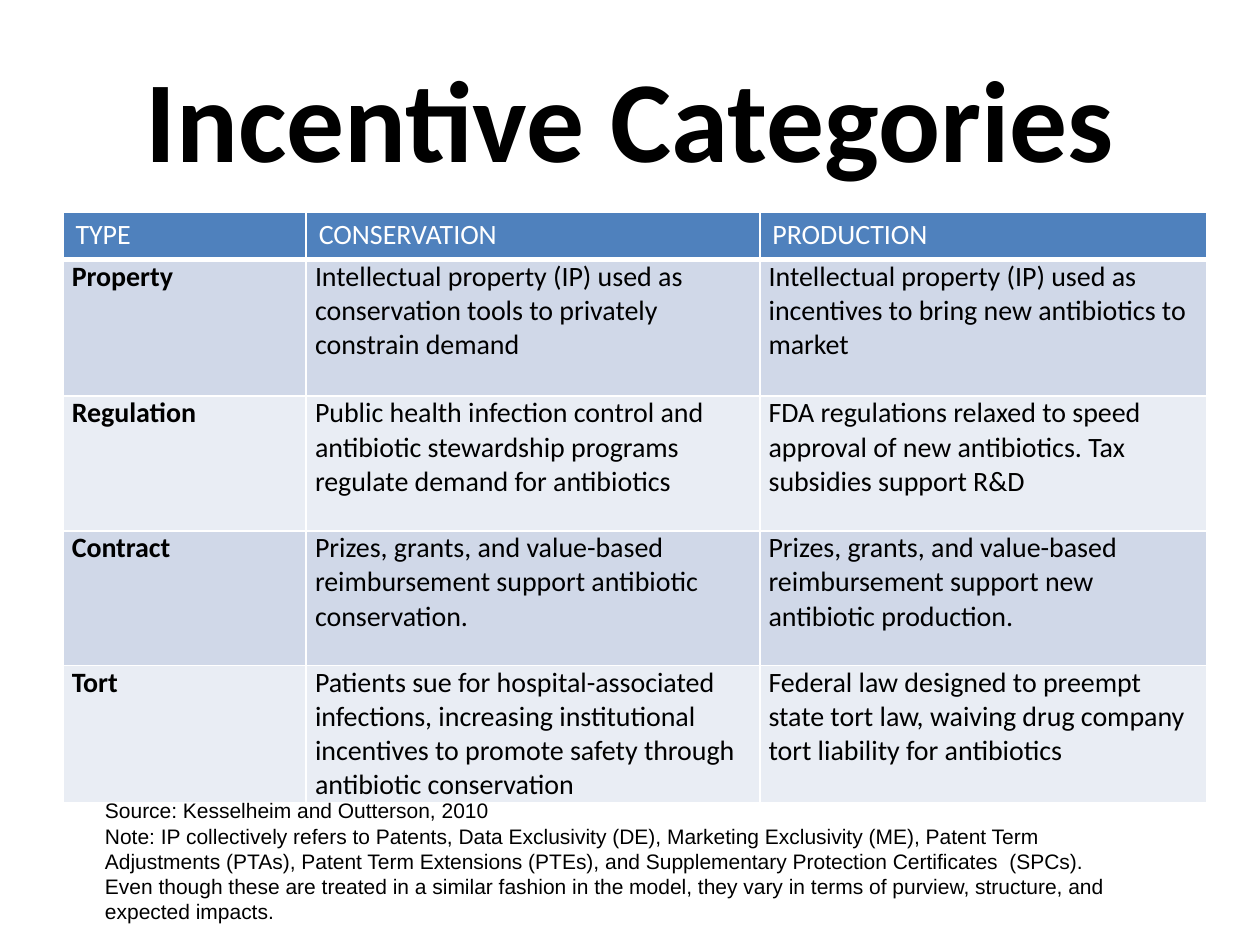
from lxml.etree import SubElement
from pptx import Presentation
from pptx.dml.color import RGBColor
from pptx.enum.text import MSO_ANCHOR, PP_ALIGN
from pptx.oxml.ns import qn
from pptx.util import Pt

BLACK, WHITE = "000000", "FFFFFF"
HEADER_FILL = "4F81BD"
BAND_FILLS = ("D0D8E8", "E9EDF4")
COLUMN_WIDTHS = (139, 259.2, 255.6)
ROW_HEIGHTS = (27.4, 78, 77, 77, 77)

HEADINGS = ("TYPE", "CONSERVATION", "PRODUCTION")
INCENTIVES = (
    ("Property",
     "Intellectual property (IP) used as conservation tools to privately constrain demand",
     "Intellectual property (IP) used as incentives to bring new antibiotics to market"),
    ("Regulation",
     "Public health infection control and antibiotic stewardship programs "
     "regulate demand for antibiotics",
     "FDA regulations relaxed to speed approval of new antibiotics. Tax subsidies support R&D"),
    ("Contract",
     "Prizes, grants, and value-based reimbursement support antibiotic conservation.",
     "Prizes, grants, and value-based reimbursement support new antibiotic production."),
    ("Tort",
     "Patients sue for hospital-associated infections, increasing institutional "
     "incentives to promote safety through antibiotic conservation",
     "Federal law designed to preempt state tort law, waiving drug company "
     "tort liability for antibiotics"),
)
FOOTNOTES = (
    "Source: Kesselheim and Outterson, 2010",
    "Note: IP collectively refers to Patents, Data Exclusivity (DE), Marketing Exclusivity (ME), "
    "Patent Term Adjustments (PTAs), Patent Term Extensions (PTEs), and Supplementary Protection "
    "Certificates  (SPCs). Even though these are treated in a similar fashion in the model, they "
    "vary in terms of purview, structure, and expected impacts.",
)


def color(value):
    return RGBColor.from_string(value)


def add_span(para, text, size, font="Calibri", ink=BLACK, bold=False):
    span = para.add_run()
    span.text = text
    span.font.size = Pt(size)
    span.font.name = font
    span.font.bold = bold
    span.font.color.rgb = color(ink)


def set_margins(target, side, end):
    target.margin_left = target.margin_right = Pt(side)
    target.margin_top = target.margin_bottom = Pt(end)


def add_title(page, text):
    title = page.shapes.title
    title.left, title.top, title.width, title.height = Pt(36), Pt(21.6), Pt(648), Pt(90)
    title.text_frame.vertical_anchor = MSO_ANCHOR.MIDDLE
    para = title.text_frame.paragraphs[0]
    para.alignment = PP_ALIGN.CENTER
    add_span(para, text, 66, bold=True)


def set_borders(cell, bottom):
    """Draw white edges, 1 pt except for the given bottom width."""
    properties = cell._tc.get_or_add_tcPr()
    for edge, width in (("lnL", 1), ("lnR", 1), ("lnT", 1), ("lnB", bottom)):
        line = SubElement(properties, qn(f"a:{edge}"), w=str(Pt(width)))
        SubElement(SubElement(line, qn("a:solidFill")), qn("a:srgbClr"), val=WHITE)


def fill_cell(cell, text, fill, ink=BLACK, bold=False, margins=(5.04, 0), bottom=1):
    set_borders(cell, bottom)
    cell.fill.solid()
    cell.fill.fore_color.rgb = color(fill)
    cell.vertical_anchor = MSO_ANCHOR.TOP
    set_margins(cell, *margins)
    add_span(cell.text_frame.paragraphs[0], text, 16, ink=ink, bold=bold)


def add_incentive_table(page):
    table = page.shapes.add_table(
        len(ROW_HEIGHTS), len(COLUMN_WIDTHS), Pt(36), Pt(121),
        Pt(sum(COLUMN_WIDTHS)), Pt(sum(ROW_HEIGHTS))).table
    for column, width in zip(table.columns, COLUMN_WIDTHS):
        column.width = Pt(width)
    for row, height in zip(table.rows, ROW_HEIGHTS):
        row.height = Pt(height)
    for column, heading in enumerate(HEADINGS):
        fill_cell(table.cell(0, column), heading, HEADER_FILL, ink=WHITE,
                  margins=(7.2, 3.6), bottom=3)
    for row, texts in enumerate(INCENTIVES):
        for column, text in enumerate(texts):
            fill_cell(table.cell(row + 1, column), text, BAND_FILLS[row % 2], bold=column == 0)


def add_footnotes(page, texts):
    box = page.shapes.add_textbox(Pt(60), Pt(456), Pt(582), Pt(66))
    frame = box.text_frame
    frame.word_wrap = True
    set_margins(frame, 0, 0)
    for index, text in enumerate(texts):
        para = frame.add_paragraph() if index else frame.paragraphs[0]
        add_span(para, text, 12, font="Arial")


def main():
    deck = Presentation()
    deck.slide_width, deck.slide_height = Pt(720), Pt(540)
    page = deck.slides.add_slide(deck.slide_layouts[5])
    add_title(page, "Incentive Categories")
    add_incentive_table(page)
    add_footnotes(page, FOOTNOTES)
    deck.save("out.pptx")


if __name__ == "__main__":
    main()
